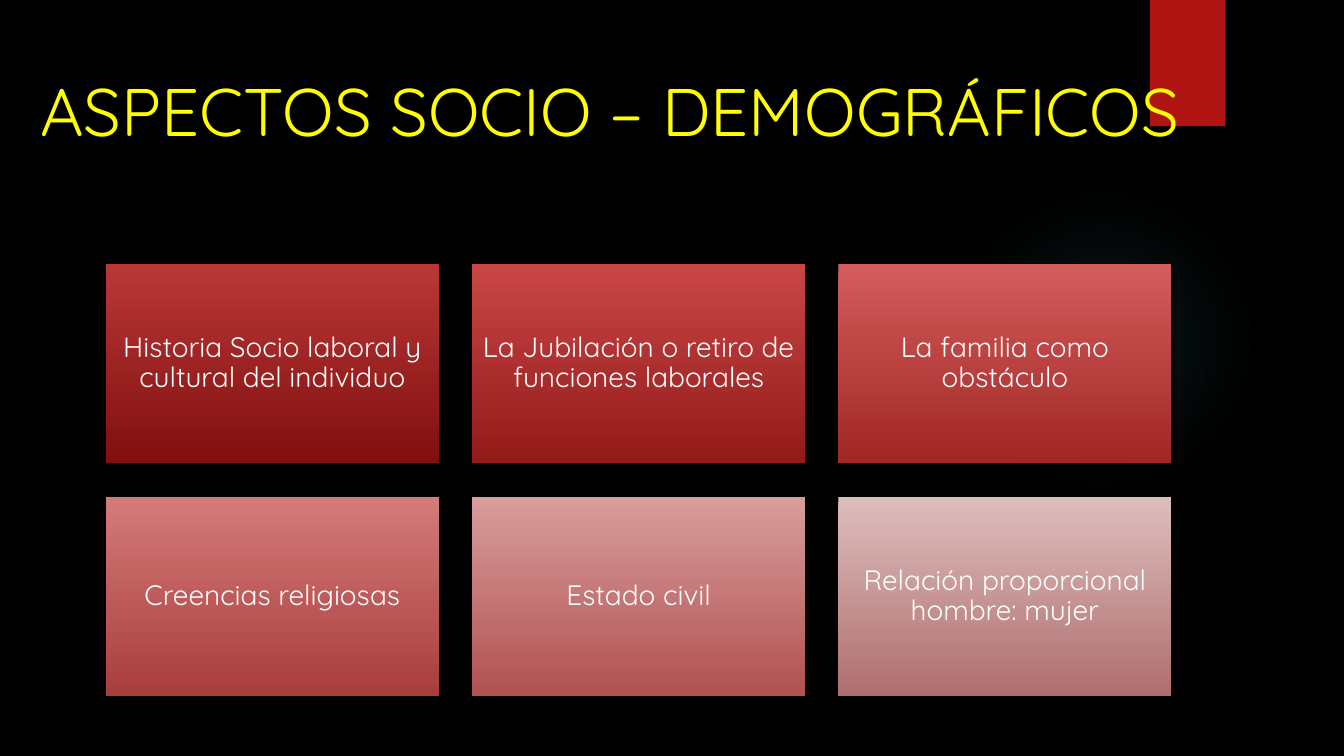
from dataclasses import dataclass

from pptx import Presentation
from pptx.dml.color import RGBColor
from pptx.enum.shapes import MSO_SHAPE
from pptx.enum.text import MSO_ANCHOR, MSO_AUTO_SIZE, PP_ALIGN
from pptx.oxml import parse_xml
from pptx.oxml.ns import nsdecls
from pptx.util import Cm, Pt


@dataclass(frozen=True)
class Theme:
    font: str = "Quicksand"
    background: str = "000000"
    ribbon: str = "B01513"
    glow: str = "50B9C1"
    title_color: str = "FFFF00"
    card_text: str = "FFFFFF"
    title_size: int = 48
    card_size: int = 20


THEME = Theme()
TITLE = "ASPECTOS SOCIO – DEMOGRÁFICOS"

# Text, top colour and bottom colour of each card
CARDS = [
    ("Historia Socio laboral y cultural del individuo", "B93837", "800F0E"),
    ("La Jubilación o retiro de funciones laborales", "C94646", "921A19"),
    ("La familia como obstáculo", "D25D5C", "A12726"),
    ("Creencias religiosas", "D47B7A", "A83D3C"),
    ("Estado civil", "D79D9C", "B15150"),
    ("Relación proporcional hombre: mujer", "DEBDBD", "AF6E6E"),
]
COLUMNS = 3
GRID_LEFT, GRID_TOP = 2.67, 6.65
CARD_WIDTH, CARD_HEIGHT, CARD_GAP = 8.39, 5.03, 0.84


def apply_format(target, values):
    for name, value in values.items():
        setattr(target, name, value)


def write_text(shape, text, size, color, frame_format, paragraph_format):
    frame = shape.text_frame
    frame.text = text
    apply_format(frame, {"word_wrap": True, "auto_size": MSO_AUTO_SIZE.NONE, **frame_format})
    paragraph = frame.paragraphs[0]
    apply_format(paragraph, {"space_before": Pt(0), **paragraph_format})
    apply_format(paragraph.font, {"name": THEME.font, "size": Pt(size)})
    paragraph.font.color.rgb = RGBColor.from_string(color)


def add_plain_shape(slide, kind, left, top, width, height):
    """Add a shape without outline or shadow; lengths are in centimetres."""
    shape = slide.shapes.add_shape(kind, Cm(left), Cm(top), Cm(width), Cm(height))
    shape.shadow.inherit = False
    shape.line.fill.background()
    return shape


def add_glow(slide):
    """Add the faint round light, which fades out from its centre."""
    glow = add_plain_shape(slide, MSO_SHAPE.OVAL, 23.9, 4.65, 7.82, 7.82)
    stops = "".join(
        f'<a:gs pos="{position * 1000}"><a:srgbClr val="{THEME.glow}">'
        f'<a:alpha val="{opacity * 1000}"/></a:srgbClr></a:gs>'
        for position, opacity in ((0, 7), (36, 6), (69, 0))
    )
    gradient = parse_xml(
        f'<a:gradFill {nsdecls("a")}><a:gsLst>{stops}</a:gsLst><a:path path="circle">'
        '<a:fillToRect l="50000" t="50000" r="50000" b="50000"/></a:path></a:gradFill>'
    )
    glow.element.spPr.prstGeom.addnext(gradient)


def add_ribbon(slide):
    ribbon = add_plain_shape(slide, MSO_SHAPE.RECTANGLE, 28.98, 0, 1.9, 3.18)
    ribbon.fill.solid()
    ribbon.fill.fore_color.rgb = RGBColor.from_string(THEME.ribbon)


def place_title(slide):
    """Format the title placeholder and bring it in front of the ribbon."""
    title = slide.shapes.title
    apply_format(title, {"left": Cm(0.76), "top": Cm(1.63), "width": Cm(31.93), "height": Cm(3.89)})
    write_text(title, TITLE, THEME.title_size, THEME.title_color,
               {"vertical_anchor": MSO_ANCHOR.TOP}, {"alignment": PP_ALIGN.LEFT})
    title.element.getparent().append(title.element)


def add_card(slide, index, text, top_color, bottom_color):
    row, column = divmod(index, COLUMNS)
    card = add_plain_shape(
        slide, MSO_SHAPE.RECTANGLE,
        GRID_LEFT + column * (CARD_WIDTH + CARD_GAP),
        GRID_TOP + row * (CARD_HEIGHT + CARD_GAP),
        CARD_WIDTH, CARD_HEIGHT,
    )
    card.fill.gradient()
    card.fill.gradient_angle = 270
    for stop, color in zip(card.fill.gradient_stops, (top_color, bottom_color)):
        stop.color.rgb = RGBColor.from_string(color)
    margins = {f"margin_{side}": Cm(0.21) for side in ("left", "top", "right", "bottom")}
    write_text(card, text, THEME.card_size, THEME.card_text,
               {"vertical_anchor": MSO_ANCHOR.MIDDLE, **margins},
               {"alignment": PP_ALIGN.CENTER, "line_spacing": 0.9})


def main():
    presentation = Presentation()
    apply_format(presentation, {"slide_width": Cm(33.87), "slide_height": Cm(19.05)})
    slide = presentation.slides.add_slide(presentation.slide_layouts[5])
    slide.background.fill.solid()
    slide.background.fill.fore_color.rgb = RGBColor.from_string(THEME.background)
    add_glow(slide)
    add_ribbon(slide)
    place_title(slide)
    for index, card in enumerate(CARDS):
        add_card(slide, index, *card)
    presentation.save("out.pptx")


if __name__ == "__main__":
    main()
